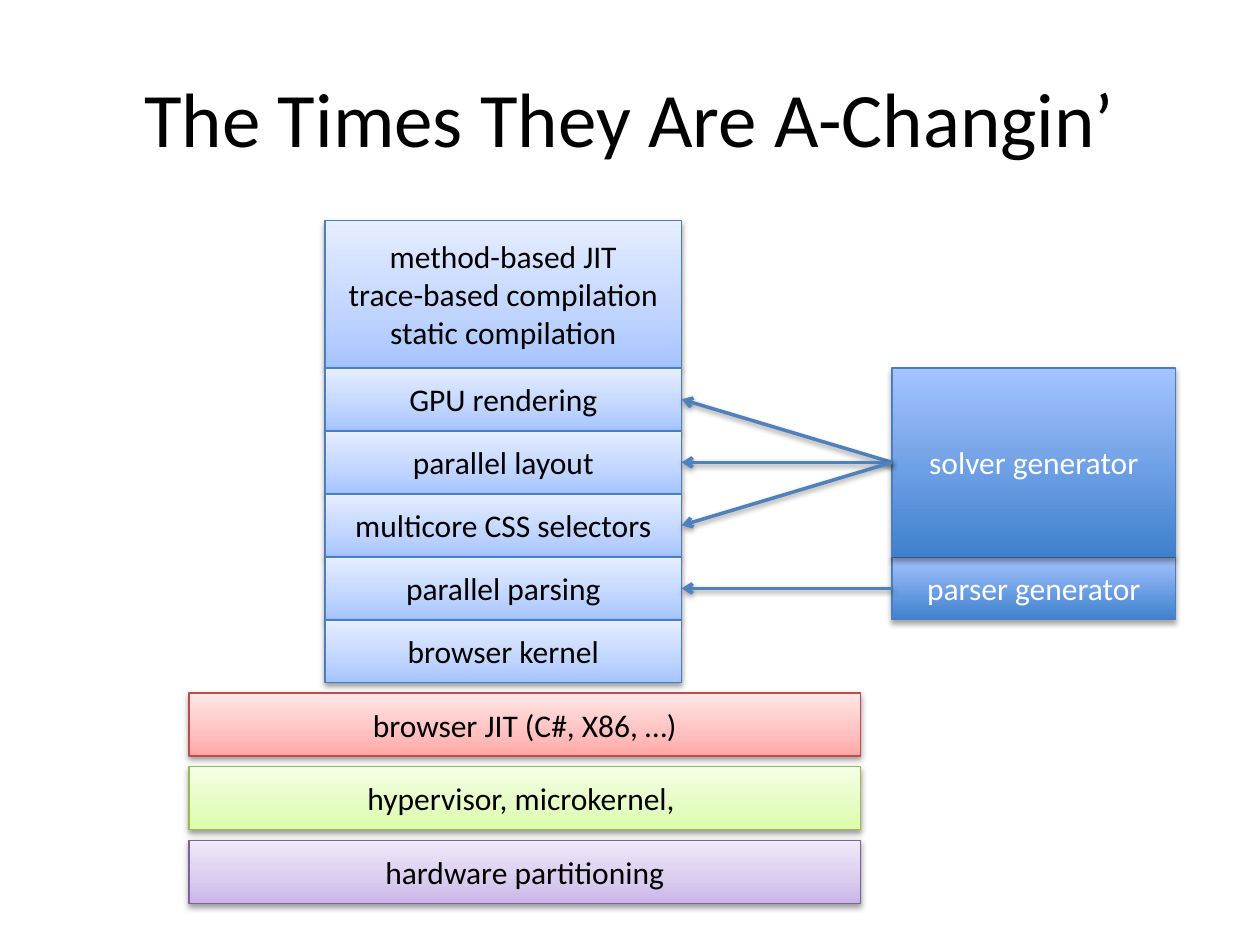
from copy import deepcopy

from lxml import etree
from pptx import Presentation
from pptx.dml.color import RGBColor
from pptx.enum import shapes, text
from pptx.oxml import ns
from pptx.util import Inches, Pt

BLACK = RGBColor(0, 0, 0)
WHITE = RGBColor(0xFF, 0xFF, 0xFF)
ARROW = RGBColor(0x4F, 0x81, 0xBD)

# Each scheme: line colour, then gradient colours from bottom to top
BLUE = [RGBColor.from_string(c) for c in ("4B7EBC", "A4C4FF", "BFD4FF", "E6EEFF")]
RED = [RGBColor.from_string(c) for c in ("BF4C48", "FFA6A5", "FFC0BF", "FFE7E7")]
GREEN = [RGBColor.from_string(c) for c in ("98B955", "DAFDA7", "E4FCC2", "F5FFE7")]
PURPLE = [RGBColor.from_string(c) for c in ("7D60A0", "C9B5E8", "D8CBEE", "F0EAF9")]
DEEP = [RGBColor.from_string(c) for c in ("4B7EBC", "3F80CE", "A4C4FF")]

FONT = "Calibri"
ROW = 0.5    # height of a single-line box
GAP = 0.085  # space between platform layers


def add_shadow(props, dist=20000, alpha=38000):
    """Put a soft downward shadow on a shape or connector."""
    effects = props.find(ns.qn("a:effectLst"))
    if effects is None:
        effects = etree.SubElement(props, ns.qn("a:effectLst"))
    outer = etree.SubElement(effects, ns.qn("a:outerShdw"), blurRad="40000",
                             dist=str(dist), dir="5400000", rotWithShape="0")
    color = etree.SubElement(outer, ns.qn("a:srgbClr"), val="000000")
    etree.SubElement(color, ns.qn("a:alpha"), val=str(alpha))


def fill_box(box, colors):
    """Fill from bottom to top; a third colour sits at 35 percent."""
    box.fill.gradient()
    box.fill.gradient_angle = 90
    if len(colors) == 3:
        first = box._element.spPr.find(".//" + ns.qn("a:gs"))
        first.addnext(deepcopy(first))
    places = (0, 0.35, 1) if len(colors) == 3 else (0, 1)
    for stop, place, color in zip(box.fill.gradient_stops, places, colors):
        stop.position = place
        stop.color.rgb = color


def add_box(slide, label, left, top, width, height, scheme):
    box = slide.shapes.add_shape(shapes.MSO_SHAPE.RECTANGLE, Inches(left),
                                 Inches(top), Inches(width), Inches(height))
    fill_box(box, scheme[1:])
    box.line.color.rgb = scheme[0]
    box.line.width = Pt(0.75)
    box.shadow.inherit = False
    deep = scheme is DEEP
    add_shadow(box._element.spPr, *((23000, 35000) if deep else ()))
    frame = box.text_frame
    frame.text = label
    frame.vertical_anchor = text.MSO_ANCHOR.MIDDLE
    for par in frame.paragraphs:
        par.alignment = text.PP_ALIGN.CENTER
        font = par.runs[0].font
        font.name, font.size = FONT, Pt(18)
        font.color.rgb = WHITE if deep else BLACK
    return box


def add_title(slide, label, left, top, width, height):
    title = slide.shapes.title
    title.left, title.top = Inches(left), Inches(top)
    title.width, title.height = Inches(width), Inches(height)
    title.text_frame.text = label
    title.text_frame.vertical_anchor = text.MSO_ANCHOR.MIDDLE
    par = title.text_frame.paragraphs[0]
    par.alignment = text.PP_ALIGN.CENTER
    font = par.runs[0].font
    font.name, font.size = FONT, Pt(44)
    font.color.rgb = BLACK


def add_layers(slide, left, top, width):
    """Platform layers, placed from the lowest one up."""
    layers = [("browser JIT (C#, X86, …)", RED),
              ("hypervisor, microkernel, ", GREEN),
              ("hardware partitioning", PURPLE)]
    for i, (label, scheme) in reversed(list(enumerate(layers))):
        add_box(slide, label, left, top + i * (ROW + GAP), width, ROW, scheme)


def add_stack(slide, left, top, width):
    """Browser parts without gaps; returns the boxes by label."""
    head = "method-based JIT\ntrace-based compilation\nstatic compilation"
    tall = 1.17
    add_box(slide, head, left, top, width, tall, BLUE)
    labels = ["GPU rendering", "parallel layout", "multicore CSS selectors",
              "parallel parsing", "browser kernel"]
    return {label: add_box(slide, label, left, top + tall + i * ROW,
                           width, ROW, BLUE)
            for i, label in enumerate(labels)}


def add_tools(slide, left, top, width):
    """Generators: the solver spans three rows, the parser one."""
    tall = 3 * ROW
    parser = add_box(slide, "parser generator", left, top + tall, width, ROW, DEEP)
    solver = add_box(slide, "solver generator", left, top, width, tall, DEEP)
    return solver, parser


def add_arrow(slide, start, end):
    """Arrow from the left side of start to the right side of end."""
    line = slide.shapes.add_connector(shapes.MSO_CONNECTOR.STRAIGHT, 0, 0, 0, 0)
    line.begin_connect(start, 1)
    line.end_connect(end, 3)
    line.line.color.rgb = ARROW
    line.line.width = Pt(2)
    props = line._element.spPr
    etree.SubElement(props.find(ns.qn("a:ln")), ns.qn("a:tailEnd"), type="arrow")
    add_shadow(props)


def main():
    deck = Presentation()
    deck.slide_width, deck.slide_height = Inches(10), Inches(7.5)
    slide = deck.slides.add_slide(deck.slide_layouts[5])

    add_title(slide, "The Times They Are A-Changin’", 0.5, 0.3, 9, 1.25)
    add_layers(slide, 1.5, 5.5, 5.33)
    parts = add_stack(slide, 2.58, 1.75, 2.83)
    solver, parser = add_tools(slide, 7.08, 2.92, 2.25)

    # Which generator makes which part
    for label in ("GPU rendering", "parallel layout", "multicore CSS selectors"):
        add_arrow(slide, solver, parts[label])
    add_arrow(slide, parser, parts["parallel parsing"])

    deck.save("out.pptx")


if __name__ == "__main__":
    main()
